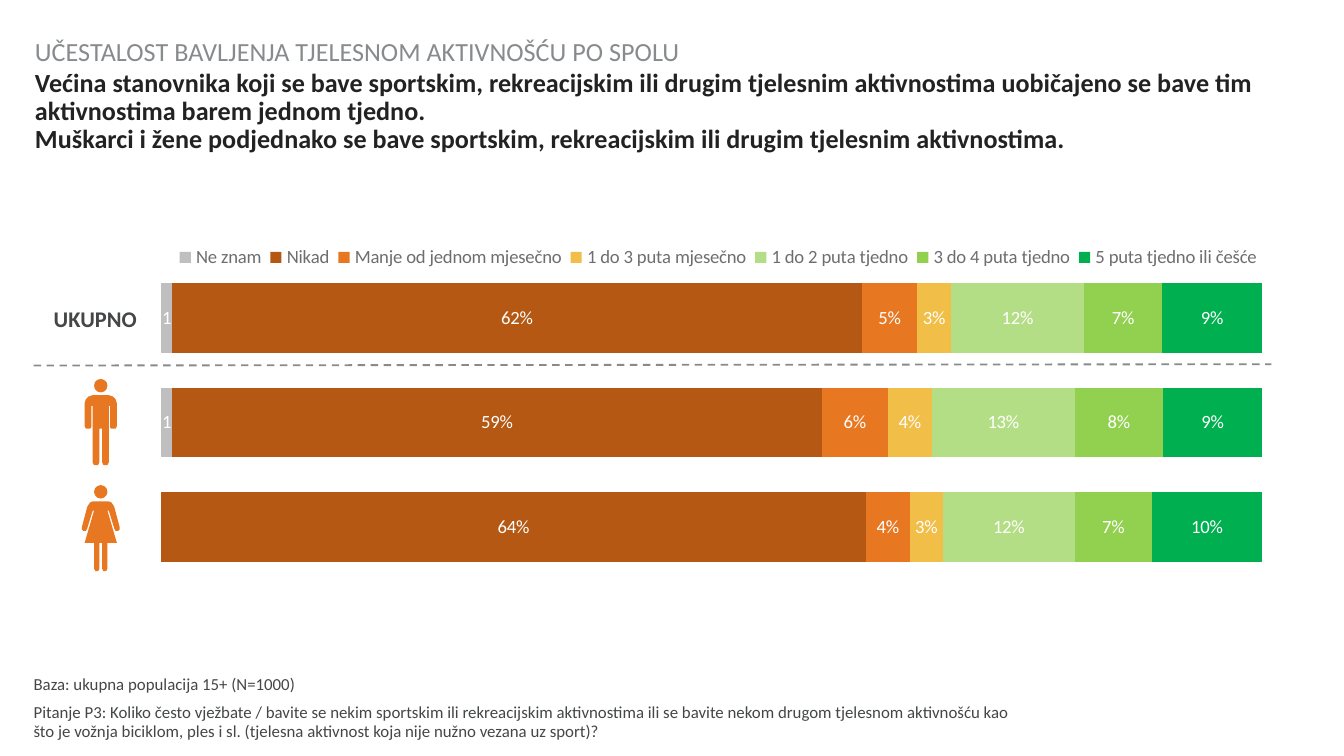
from lxml import etree
from pptx import Presentation
from pptx.chart.data import CategoryChartData
from pptx.dml.color import RGBColor
from pptx.enum import chart as charts, dml, shapes, text
from pptx.oxml import parse_xml
from pptx.oxml.ns import nsdecls, qn
from pptx.util import Inches, Pt

FONT = "Calibri"
INK = RGBColor(0x22, 0x22, 0x23)
DARK_GRAY = RGBColor(0x44, 0x46, 0x47)
LEGEND_GRAY = RGBColor(0x6E, 0x6E, 0x71)
GRAY = RGBColor(0x88, 0x8B, 0x8D)
WHITE = RGBColor(0xFF, 0xFF, 0xFF)
ORANGE = RGBColor(0xE8, 0x77, 0x22)

# Answer, shares in total / men / women, bar colour
ANSWERS = [
    ("Ne znam", (1, 1, 0), RGBColor(0xBF, 0xBF, 0xBF)),
    ("Nikad", (62, 59, 64), RGBColor(0xB5, 0x58, 0x13)),
    ("Manje od jednom mjesečno", (5, 6, 4), ORANGE),
    ("1 do 3 puta mjesečno", (3, 4, 3), RGBColor(0xF1, 0xBE, 0x48)),
    ("1 do 2 puta tjedno", (12, 13, 12), RGBColor(0xB4, 0xDE, 0x86)),
    ("3 do 4 puta tjedno", (7, 8, 7), RGBColor(0x92, 0xD0, 0x50)),
    ("5 puta tjedno ili češće", (9, 9, 10), RGBColor(0x00, 0xB0, 0x50)),
]

# Right half of each body, in hundredths of an inch from the centre line and head top
MAN = [(6, 12), (9, 13), (11, 15), (12, 18), (12, 35), (11, 37), (8, 37), (7, 36),
       (7, 20), (6, 20), (6, 62), (5, 64), (2, 64), (1, 62), (1, 37)]
WOMAN = [(6, 12), (8, 13), (10, 16), (14, 31), (14, 33), (13, 34), (11, 34), (10, 32),
         (6, 19), (5, 19), (12, 43), (5, 43), (5, 62), (4, 64), (2, 64), (1, 62), (1, 43)]


def place(shape, box):
    shape.left, shape.top, shape.width, shape.height = (Inches(v) for v in box)


def style(font, size, color, bold=False):
    font.name, font.size, font.bold = FONT, Pt(size), bold
    font.color.rgb = color


def write(shape, box, paragraphs, size, color, bold=False, bottom=False, spacing=1.0, gap=0):
    """Fill a text shape; each paragraph is a list of lines."""
    place(shape, box)
    frame = shape.text_frame
    frame.word_wrap = True
    frame.auto_size = text.MSO_AUTO_SIZE.NONE
    frame.vertical_anchor = text.MSO_ANCHOR.BOTTOM if bottom else text.MSO_ANCHOR.TOP
    frame.margin_left = frame.margin_right = frame.margin_top = frame.margin_bottom = 0
    for number, lines in enumerate(paragraphs):
        para = frame.add_paragraph() if number else frame.paragraphs[0]
        para.alignment = text.PP_ALIGN.LEFT
        para.line_spacing = spacing
        para.space_before = Pt(gap if number else 0)
        para.space_after = Pt(0)
        for index, line in enumerate(lines):
            if index:
                para.add_line_break()
            span = para.add_run()
            span.text = line
            style(span.font, size, color, bold)


def set_layout(parent, index, part, area, inner=False):
    """Fix a chart part, given in inches, inside a chart area of that width and height."""
    for old in parent.findall(qn("c:layout")):
        parent.remove(old)
    layout = parse_xml(f"<c:layout {nsdecls('c')}><c:manualLayout/></c:layout>")
    values = [("layoutTarget", "inner")] if inner else []
    values += [("xMode", "edge"), ("yMode", "edge")]
    values += [(tag, length / whole) for tag, length, whole in zip("xywh", part, area * 2)]
    for tag, value in values:
        etree.SubElement(layout[0], qn("c:" + tag)).set("val", str(value))
    parent.insert(index, layout)


def add_frequency_chart(page, box):
    data = CategoryChartData(number_format="0")
    data.categories = ["1", "2", "3"]
    for name, shares, _ in ANSWERS:
        data.add_series(name, shares)
    chart = page.shapes.add_chart(
        charts.XL_CHART_TYPE.BAR_STACKED_100, *(Inches(v) for v in box), data).chart
    style(chart.font, 10, INK)
    chart.has_title = False
    chart.category_axis.reverse_order = True
    chart.value_axis.has_major_gridlines = False
    chart.category_axis.visible = chart.value_axis.visible = False

    chart.has_legend = True
    chart.legend.position = charts.XL_LEGEND_POSITION.TOP
    chart.legend.include_in_layout = False
    style(chart.legend.font, 10, LEGEND_GRAY)
    set_layout(chart.legend._element, 1, (0.31, 0.13, 8.15, 0.23), box[2:])

    plot = chart.plots[0]
    plot.gap_width, plot.overlap, plot.vary_by_categories = 50, 100, False
    set_layout(plot._element.getparent(), 0, (0.24, 0.31, 8.19, 2.33), box[2:], inner=True)
    for series, (name, _, color) in zip(plot.series, ANSWERS):
        series.format.fill.solid()
        series.format.fill.fore_color.rgb = color
        labels = series.data_labels
        labels.show_value = True
        labels.number_format_is_linked = False
        labels.number_format = "0;;" if name == "Ne znam" else '0"%"'
        style(labels.font, 10, WHITE)


def add_person(page, center, top, half):
    """Draw a head and a body mirrored about the centre line."""
    parts = page.shapes.add_group_shape().shapes
    head = parts.add_shape(shapes.MSO_SHAPE.OVAL, Inches(center - 0.05), Inches(top),
                           Inches(0.1), Inches(0.1))
    outline = half + [(-x, y) for x, y in reversed(half)]
    builder = parts.build_freeform(*outline[0], scale=Inches(0.01))
    builder.add_line_segments(outline[1:], close=True)
    for part in (head, builder.convert_to_shape(Inches(center), Inches(top))):
        part.shadow.inherit = False
        part.fill.solid()
        part.fill.fore_color.rgb = ORANGE
        part.line.fill.background()


def add_divider(page, start, end):
    line = page.shapes.add_connector(shapes.MSO_CONNECTOR.STRAIGHT,
                                     *(Inches(v) for v in start + end))
    line.line.color.rgb = GRAY
    line.line.width = Pt(1)
    line.line.dash_style = dml.MSO_LINE.DASH
    etree.SubElement(line._element.spPr, qn("a:effectLst"))


def add_headings(page):
    title, topic, _, source, _ = page.placeholders
    write(title, (0.26, 0.52, 9.56, 0.64), [[
        "Većina stanovnika koji se bave sportskim, rekreacijskim ili drugim tjelesnim "
        "aktivnostima uobičajeno se bave tim aktivnostima barem jednom tjedno. ",
        "Muškarci i žene podjednako se bave sportskim, rekreacijskim ili drugim "
        "tjelesnim aktivnostima."]], 14, INK, bold=True, spacing=0.9)
    write(topic, (0.26, 0.02, 7.35, 0.48),
          [["UČESTALOST BAVLJENJA TJELESNOM AKTIVNOŠĆU PO SPOLU"]], 14, GRAY, bottom=True)
    write(source, (0.25, 5.17, 7.35, 0.35), [
        ["Baza: ukupna populacija 15+ (N=1000)"],
        ["Pitanje P3: Koliko često vježbate / bavite se nekim sportskim ili rekreacijskim "
         "aktivnostima ili se bavite nekom drugom tjelesnom aktivnošću kao što je vožnja "
         "biciklom, ples i sl. (tjelesna aktivnost koja nije nužno vezana uz sport)?"],
    ], 9, DARK_GRAY, bottom=True, spacing=0.95, gap=5)
    for empty in [p for p in page.placeholders if not p.text_frame.text]:
        empty._element.getparent().remove(empty._element)


def add_row_labels(page, left, top):
    total = page.shapes.add_textbox(0, 0, 0, 0)
    write(total, (left, top, 1.04, 0.2), [["UKUPNO"]], 12, DARK_GRAY, bold=True)
    for row, half in enumerate((MAN, WOMAN)):
        add_person(page, left + 0.35, top + 0.55 + 0.79 * row, half)


def main():
    deck = Presentation()
    deck.slide_width = Inches(10)
    deck.slide_height = deck.slide_width * 9 // 16
    page = deck.slides.add_slide(deck.slide_layouts.get_by_name("Comparison"))
    add_headings(page)
    add_frequency_chart(page, (0.96, 1.67, 8.67, 2.83))
    add_divider(page, (0.25, 2.72), (9.46, 2.71))
    add_row_labels(page, 0.4, 2.27)
    deck.save("out.pptx")


if __name__ == "__main__":
    main()
